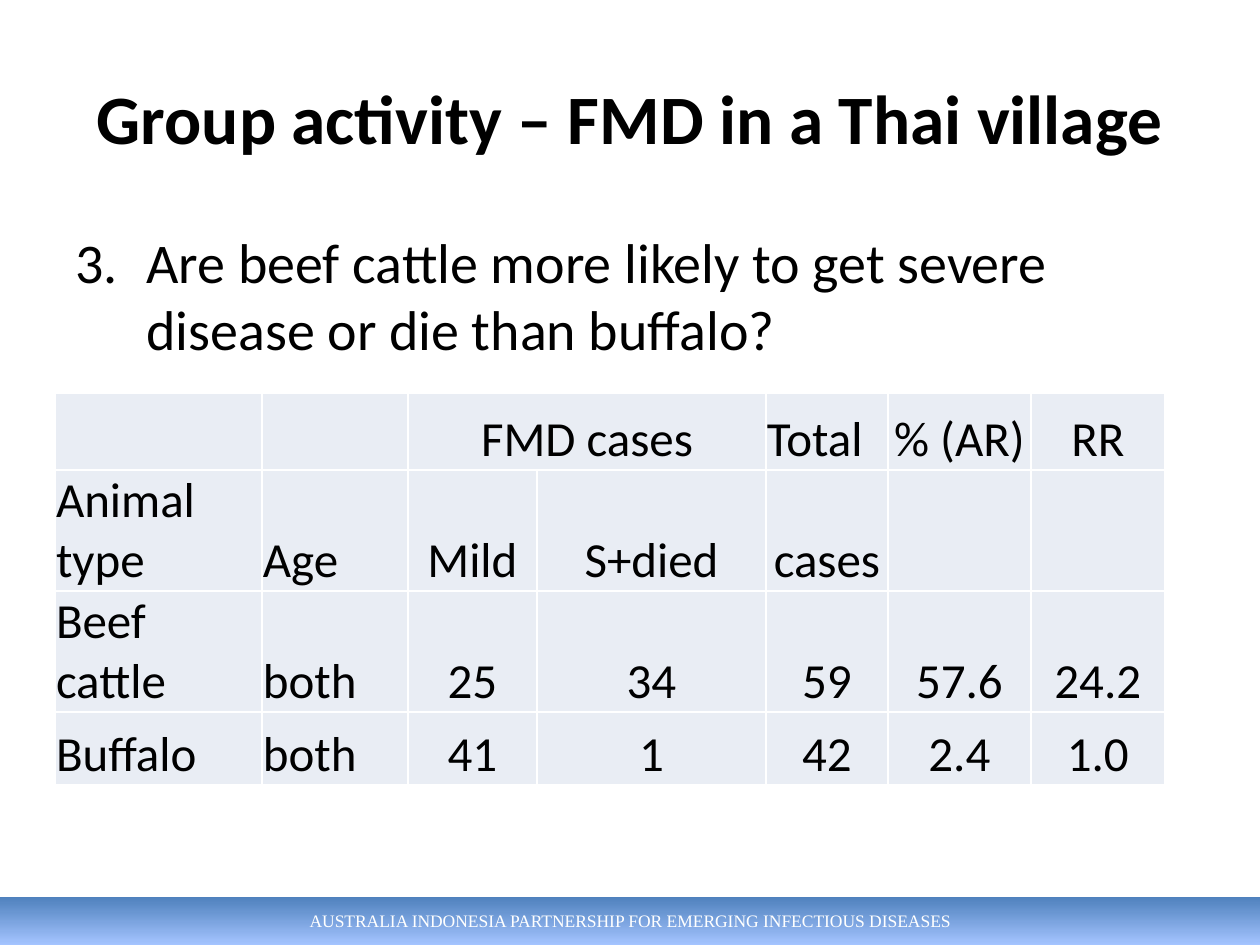
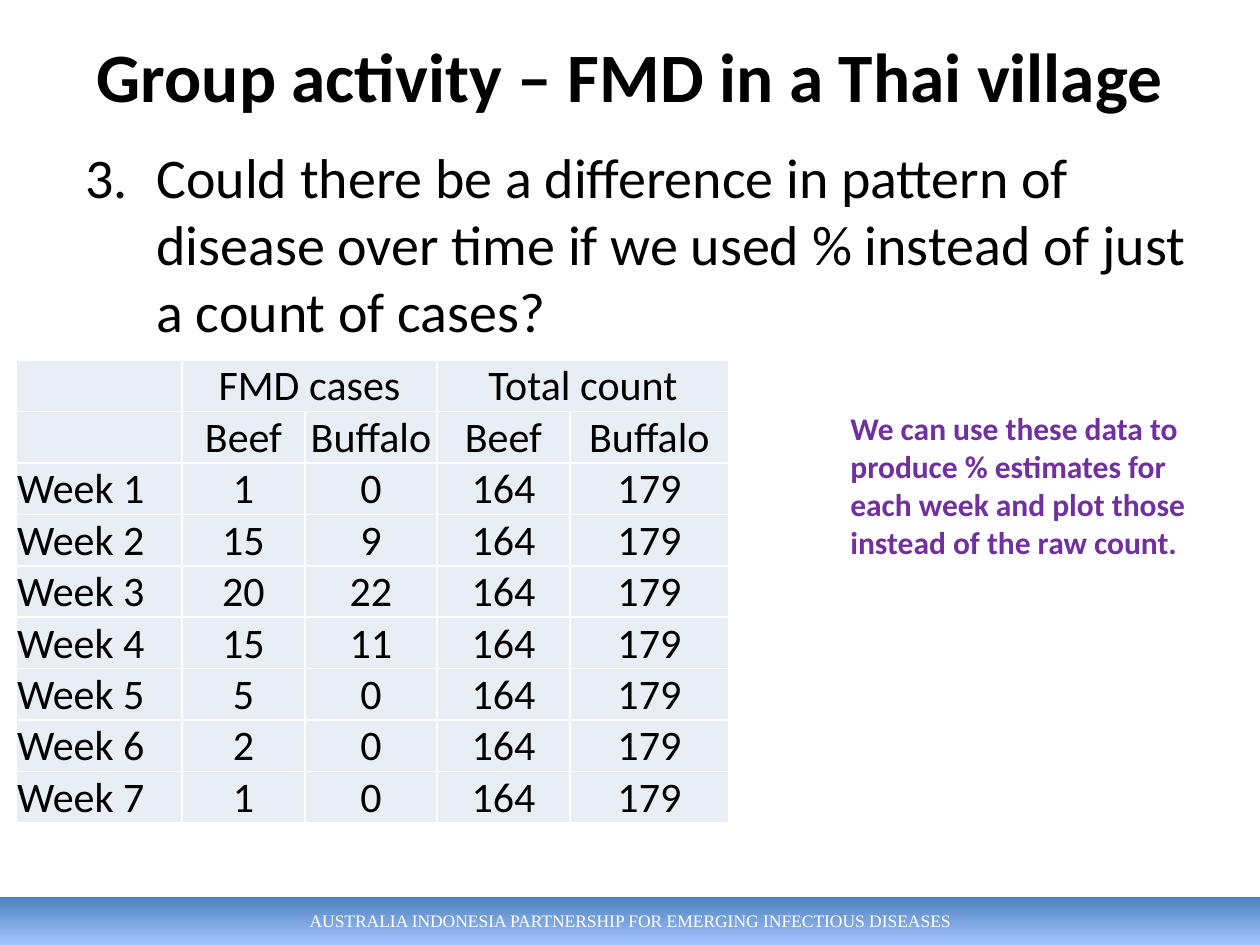
import pptx
import pptx.util
import pptx.dml.color
import pptx.enum.shapes
import pptx.enum.text
import pptx.oxml.ns
import lxml.etree

RGB = pptx.dml.color.RGBColor
ALIGN = pptx.enum.text.PP_ALIGN
ANCHOR = pptx.enum.text.MSO_ANCHOR

BLACK = RGB(0x00, 0x00, 0x00)
WHITE = RGB(0xFF, 0xFF, 0xFF)
PURPLE = RGB(0x70, 0x30, 0xA0)
PALE = RGB(0xE9, 0xED, 0xF4)
BAND_TOP = RGB(0x4F, 0x81, 0xBD)
BAND_END = RGB(0xA4, 0xC4, 0xFF)

WIDE, HIGH = 1260, 945
BAND_H = 48
TITLE = "Group activity – FMD in a Thai village"
FOOTER = "AUSTRALIA INDONESIA PARTNERSHIP FOR EMERGING INFECTIOUS DISEASES"


def px(count):
    return pptx.util.Emu(round(count * 914400 / 126))


def add_tag(parent, name, **attrs):
    tag = lxml.etree.SubElement(parent, pptx.oxml.ns.qn(name))
    for key, value in attrs.items():
        tag.set(key, str(value))
    return tag


def write(frame, text, size=18, font="Calibri", color=BLACK, bold=False,
          align=ALIGN.LEFT, anchor=ANCHOR.TOP):
    """Put one formatted paragraph in a text frame."""
    frame.word_wrap = True
    frame.vertical_anchor = anchor
    para = frame.paragraphs[0]
    para.alignment = align
    if text:
        run = para.add_run()
        run.text = text
        run.font.size = pptx.util.Pt(size)
        run.font.name = font
        run.font.bold = bold
        run.font.color.rgb = color
    return para


def add_text(slide, box, text, **style):
    shape = slide.shapes.add_textbox(*map(px, box))
    return write(shape.text_frame, text, **style)


def add_band(slide, box):
    band = slide.shapes.add_shape(
        pptx.enum.shapes.MSO_SHAPE.RECTANGLE, *map(px, box))
    band.shadow.inherit = False
    band.line.fill.background()
    band.fill.gradient()
    band.fill.gradient_angle = 270
    for stop, color in zip(band.fill.gradient_stops, (BAND_TOP, BAND_END)):
        stop.color.rgb = color
    write(band.text_frame, FOOTER, size=10, font="Times New Roman",
          color=WHITE, align=ALIGN.CENTER, anchor=ANCHOR.MIDDLE)


def add_ask(slide, box, text):
    """Numbered question with a hanging indent."""
    para = add_text(slide, box, text, size=32)
    props = para._p.get_or_add_pPr()
    props.set("marL", str(px(71)))
    props.set("indent", str(px(-71)))
    add_tag(props, "a:buFont", typeface="+mj-lt")
    add_tag(props, "a:buAutoNum", type="arabicPeriod", startAt=3)


def style_cell(cell, text, size, align):
    cell.margin_left = cell.margin_right = cell.margin_top = px(1)
    cell.margin_bottom = 0
    write(cell.text_frame, text, size=size, align=align)
    cell.vertical_anchor = ANCHOR.BOTTOM
    props = cell._tc.get_or_add_tcPr()
    for side in ("a:lnL", "a:lnR", "a:lnT", "a:lnB"):
        line = add_tag(props, side, w=pptx.util.Pt(1))
        add_tag(add_tag(line, "a:solidFill"), "a:srgbClr", val=WHITE)
    cell.fill.solid()
    cell.fill.fore_color.rgb = PALE


def add_grid(slide, spot, cols, rows, data, size, spans, left):
    """Table at spot; left(row, col) tells which cells align left."""
    box = (*spot, sum(cols), sum(rows))
    frame = slide.shapes.add_table(len(rows), len(cols), *map(px, box))
    table = frame.table
    table.first_row = table.horz_banding = False
    for col, width in zip(table.columns, cols):
        col.width = px(width)
    for row, height in zip(table.rows, rows):
        row.height = px(height)
    for r, line in enumerate(data):
        for c, text in enumerate(line):
            align = ALIGN.LEFT if left(r, c) else ALIGN.CENTER
            style_cell(table.cell(r, c), text, size, align)
    # Headings that cover two columns
    for c in spans:
        table.cell(0, c).merge(table.cell(0, c + 1))


def add_page(deck, title_box, ask_box, ask):
    """Slide with the shared band, title and question."""
    slide = deck.slides.add_slide(deck.slide_layouts[6])
    add_band(slide, (0, HIGH - BAND_H, WIDE, BAND_H))
    add_text(slide, title_box, TITLE, size=39.6, bold=True,
             align=ALIGN.CENTER, anchor=ANCHOR.MIDDLE)
    add_ask(slide, ask_box, ask)
    return slide


def add_risk(deck):
    slide = add_page(
        deck, (63, 38, 1134, 158), (63, 221, 1134, 252),
        "Are beef cattle more likely to get severe disease or die than buffalo?")
    data = [
        ["", "", "FMD cases", "", "Total", "% (AR)", "RR"],
        ["Animal type", "Age", "Mild", "S+died", "cases", "", ""],
        ["Beef cattle", "both", "25", "34", "59", "57.6", "24.2"],
        ["Buffalo", "both", "41", "1", "42", "2.4", "1.0"],
    ]
    add_grid(slide, (55, 393), (207, 146, 129, 229, 122, 143, 134),
             (77, 121, 121, 73), data, 28, [2],
             lambda r, c: c < 2 or (r, c) == (0, 4))


def add_weeks(deck):
    slide = add_page(
        deck, (63, 15, 1134, 120), (73, 136, 1134, 252),
        "Could there be a difference in pattern of disease over time "
        "if we used % instead of just a count of cases?")
    add_text(slide, (838, 403, 407, 165),
             "We can use these data to produce % estimates for each week "
             "and plot those instead of the raw count.",
             color=PURPLE, bold=True)
    beef = (1, 15, 20, 15, 5, 2, 1)
    buff = (0, 9, 22, 11, 0, 0, 0)
    data = [["", "FMD cases", "", "Total count", ""],
            ["", "Beef", "Buffalo", "Beef", "Buffalo"]]
    for week, pair in enumerate(zip(beef, buff), 1):
        data.append([f"Week {week}", *map(str, pair), "164", "179"])
    add_grid(slide, (16, 360), (166, 123, 132, 133, 159),
             [51] * len(data), data, 24, [1, 3], lambda r, c: c == 0)


def main():
    deck = pptx.Presentation()
    deck.slide_width, deck.slide_height = px(WIDE), px(HIGH)
    add_risk(deck)
    add_weeks(deck)
    deck.save("out.pptx")


if __name__ == "__main__":
    main()
